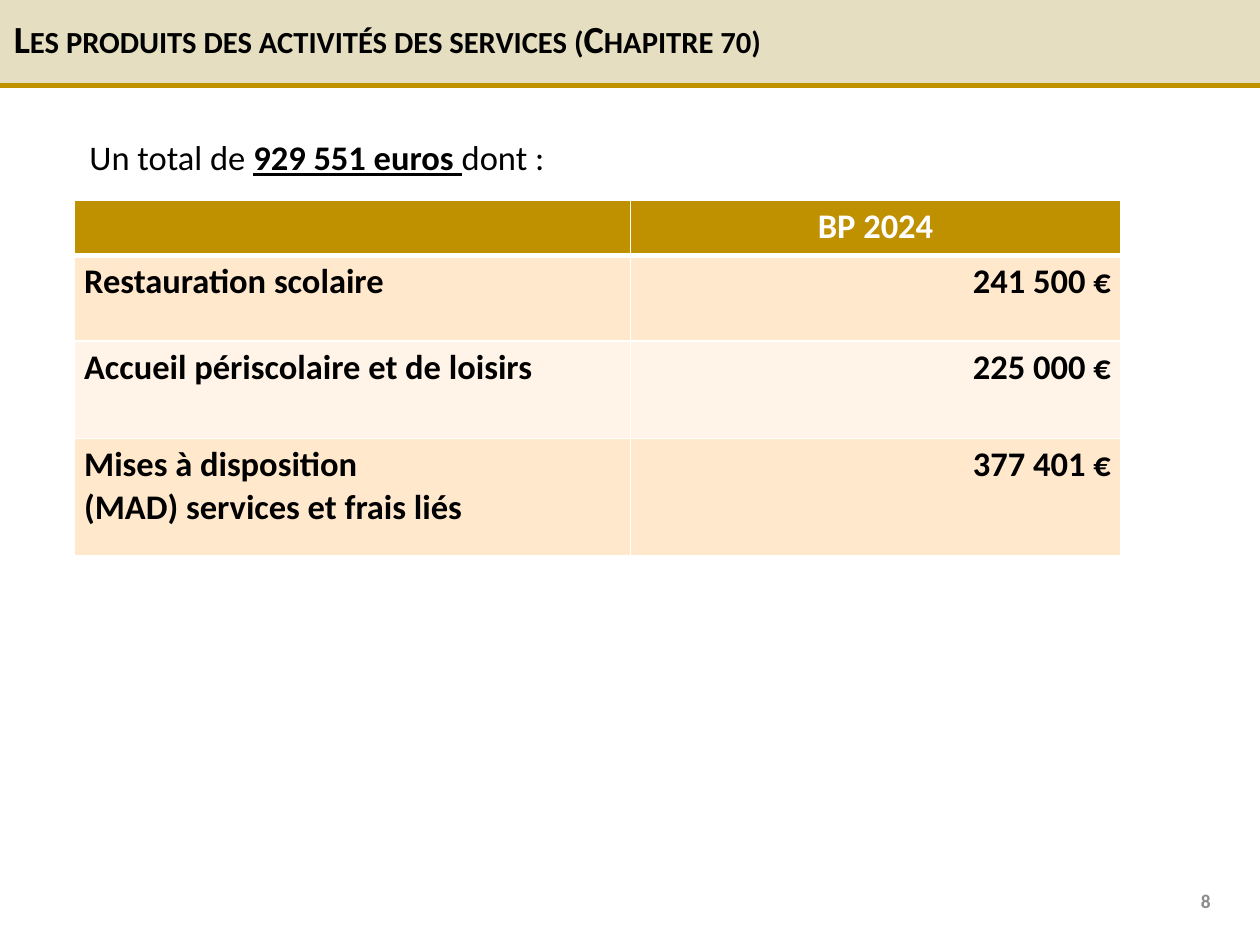
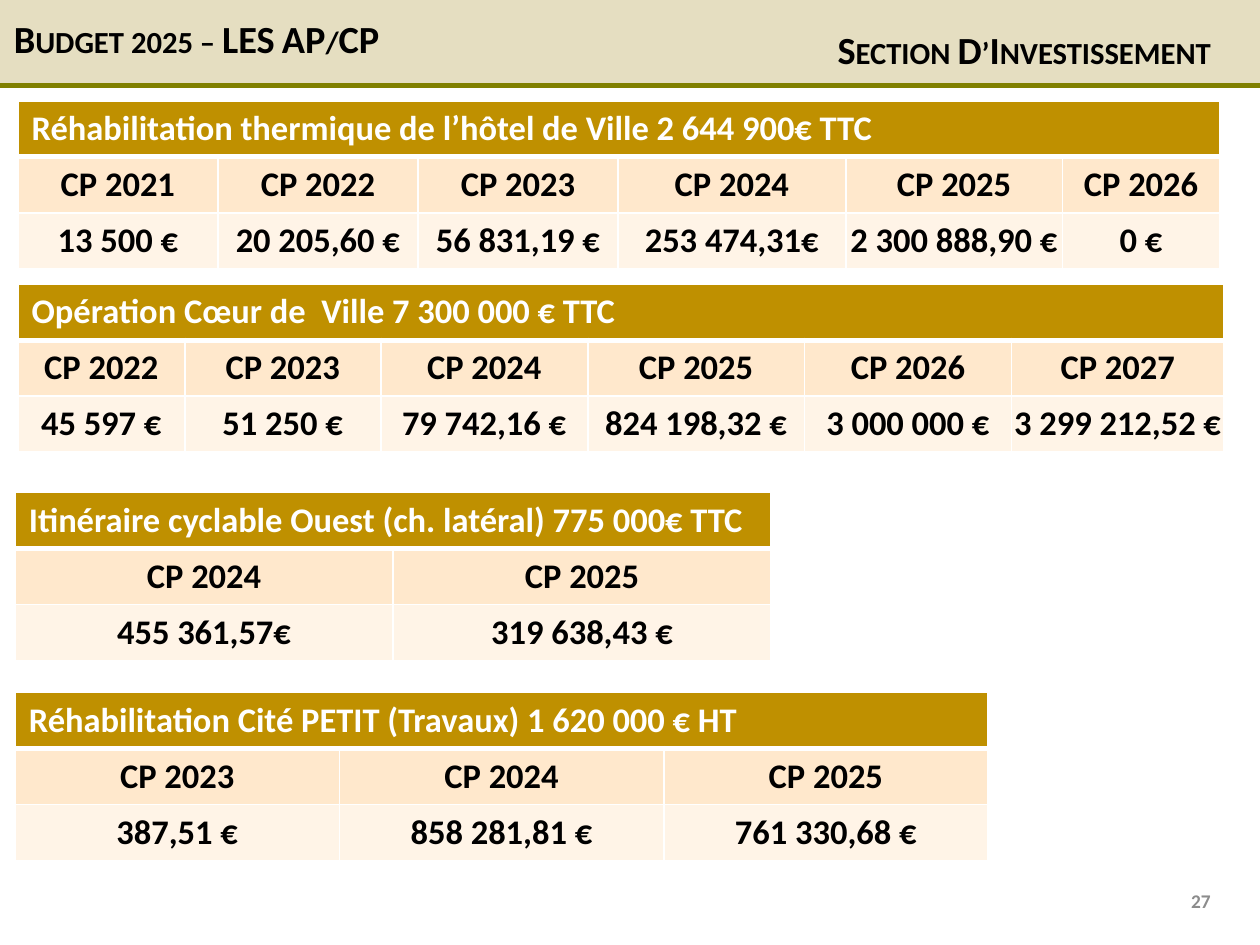
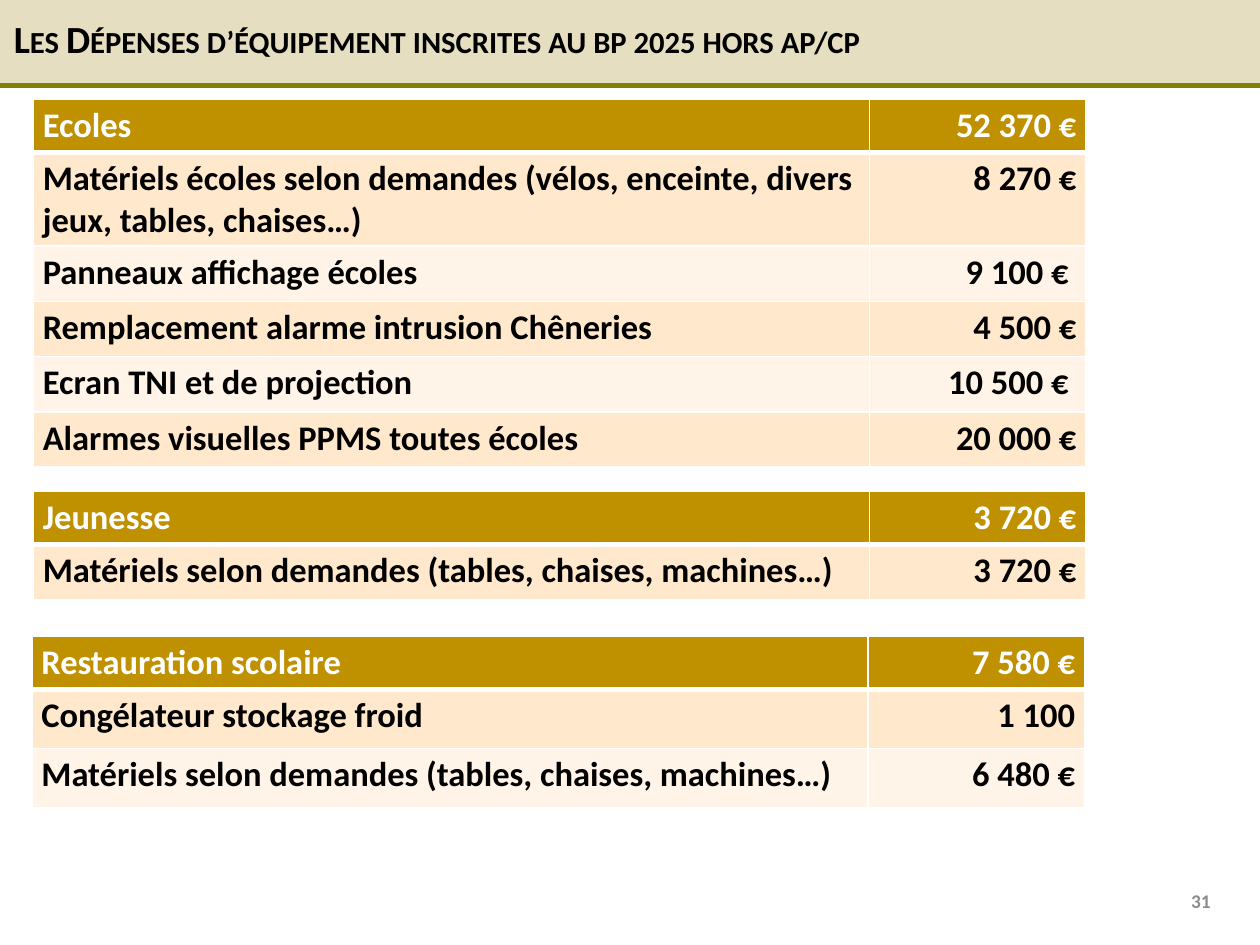
import dataclasses

import lxml.etree
import pptx
import pptx.dml.color
import pptx.enum.shapes
import pptx.enum.text
import pptx.oxml.ns
import pptx.util

LEFT = pptx.enum.text.PP_ALIGN.LEFT
CENTER = pptx.enum.text.PP_ALIGN.CENTER
RIGHT = pptx.enum.text.PP_ALIGN.RIGHT
TOP, MIDDLE = pptx.enum.text.MSO_ANCHOR.TOP, pptx.enum.text.MSO_ANCHOR.MIDDLE


@dataclasses.dataclass(frozen=True)
class Theme:
    """Colours, font, type sizes and line widths of the deck."""
    font: str = "Calibri"
    ink: str = "000000"
    paper: str = "FFFFFF"
    band: str = "E5DEC1"
    gold: str = "BF9000"
    olive: str = "808000"
    grey: str = "8C8C8C"
    stripes: tuple = ("FFE8CC", "FFF4E7")
    title: float = 20
    body: float = 18
    number: float = 10.1
    rule: float = 2.25
    thin: float = 1
    thick: float = 3


def rgb(value):
    """Turn a hex string into a colour."""
    return pptx.dml.color.RGBColor.from_string(value)


class Deck:
    """Holds the style and the current slide, on a grid of 100 columns by 100 rows."""

    def __init__(self, theme):
        """Start an empty presentation."""
        self.t = theme
        self.prs = pptx.Presentation()
        self.prs.slide_width = pptx.util.Inches(9.13)
        self.prs.slide_height = pptx.util.Inches(6.85)
        self.s = None

    def col(self, n):
        """Return the width of n columns."""
        return round(self.prs.slide_width * n / 100)

    def row(self, n):
        """Return the height of n rows."""
        return round(self.prs.slide_height * n / 100)

    def box(self, x, y, w, h):
        """Return a grid rectangle as lengths."""
        return self.col(x), self.row(y), self.col(w), self.row(h)

    def paragraph(self, tf, runs, size, color, align=LEFT, small=False, leading=None):
        """Fill the first paragraph from (text, bold, underline) runs."""
        p = tf.paragraphs[0]
        p.alignment = align
        if leading:
            p.line_spacing = leading
        for text, bold, underline in runs:
            for i, line in enumerate(text.split("\n")):
                if i:
                    p.add_line_break()
                r = p.add_run()
                r.text = line
                r.font.name, r.font.size = self.t.font, pptx.util.Pt(size)
                r.font.bold, r.font.underline = bold, underline
                r.font.color.rgb = rgb(color)
                if small:
                    r._r.get_or_add_rPr().set("cap", "small")

    def slide(self, title, number, rule):
        """Add a slide with its title band, rule and page number."""
        self.s = self.prs.slides.add_slide(self.prs.slide_layouts[5])
        sp = self.s.shapes.title
        sp.left, sp.top, sp.width, sp.height = self.box(0, 0, 100, 9.05)
        sp.fill.solid()
        sp.fill.fore_color.rgb = rgb(self.t.band)
        tf = sp.text_frame
        tf.auto_size = pptx.enum.text.MSO_AUTO_SIZE.NONE
        tf.vertical_anchor = MIDDLE
        tf.margin_top = pptx.util.Inches(0.03)
        self.paragraph(tf, [(title, True, False)], self.t.title, self.t.ink, small=True, leading=0.9)
        self.line(0, 9.05, 100, 9.05, rule)
        self.text(70.76, 92.7, 26.4, 5.26, [(str(number), True, False)],
                  self.t.number, self.t.grey, MIDDLE, align=RIGHT)

    def line(self, x1, y1, x2, y2, color):
        """Draw a straight rule."""
        ln = self.s.shapes.add_connector(pptx.enum.shapes.MSO_CONNECTOR.STRAIGHT,
                                         self.col(x1), self.row(y1), self.col(x2), self.row(y2))
        ln.line.color.rgb = rgb(color)
        ln.line.width = pptx.util.Pt(self.t.rule)
        lxml.etree.SubElement(ln._element.spPr, pptx.oxml.ns.qn("a:effectLst"))

    def text(self, x, y, w, h, runs, size, color, anchor=TOP, **style):
        """Add a text box."""
        tf = self.s.shapes.add_textbox(*self.box(x, y, w, h)).text_frame
        tf.word_wrap = True
        tf.vertical_anchor = anchor
        self.paragraph(tf, runs, size, color, **style)

    def borders(self, cell, top, bottom):
        """Give a cell its white borders."""
        tc_pr = cell._tc.get_or_add_tcPr()
        widths = {"lnL": self.t.thin, "lnR": self.t.thin, "lnT": top, "lnB": bottom}
        for i, (tag, width) in enumerate(widths.items()):
            ln = lxml.etree.Element(pptx.oxml.ns.qn("a:" + tag), w=str(int(pptx.util.Pt(width))))
            fill = lxml.etree.SubElement(ln, pptx.oxml.ns.qn("a:solidFill"))
            lxml.etree.SubElement(fill, pptx.oxml.ns.qn("a:srgbClr"), val=self.t.paper)
            tc_pr.insert(i, ln)

    def table(self, x, y, cols, rows, data, head, body, inset=(0.07, 0.04), anchor=TOP):
        """Add a table with a gold header row and striped rows."""
        tbl = self.s.shapes.add_table(len(rows), len(cols),
                                      *self.box(x, y, sum(cols), sum(rows))).table
        tbl.first_row = tbl.horz_banding = False
        for column, w in zip(tbl.columns, cols):
            column.width = self.col(w)
        for i, (h, texts) in enumerate(zip(rows, data)):
            tbl.rows[i].height = self.row(h)
            fill, ink = (self.t.stripes[(i - 1) % 2], self.t.ink) if i else (self.t.gold, self.t.paper)
            for j in range(len(cols)):
                cell = tbl.cell(i, j)
                cell.fill.solid()
                cell.fill.fore_color.rgb = rgb(fill)
                self.borders(cell, self.t.thick if i == 1 else self.t.thin,
                             self.t.thin if i else self.t.thick)
                cell.margin_left = cell.margin_right = pptx.util.Inches(inset[0])
                cell.margin_top = cell.margin_bottom = pptx.util.Inches(inset[1])
                cell.vertical_anchor = anchor if i else TOP
                if j < len(texts) and texts[j]:
                    self.paragraph(cell.text_frame, [(texts[j], True, False)], self.t.body, ink,
                                   (body if i else head)[j])
        return tbl

    def credits(self, x, y, cols, heading, first_year, amounts):
        """Add a table of yearly payment credits under a merged heading."""
        n = len(cols)
        years = [f"CP {first_year + i}" for i in range(n)]
        tbl = self.table(x, y, cols, [5.93] * 3, [[heading], years, amounts],
                         [LEFT] * n, [CENTER] * n, (0, 0.05), MIDDLE)
        tbl.cell(0, 0).merge(tbl.cell(0, n - 1))
        tbl.cell(0, 0).margin_left = pptx.util.Inches(0.1)

    def expenses(self, x, y, rows, data):
        """Add a table of items and amounts."""
        self.table(x, y, [66.37, 17.2], rows, data, (LEFT, RIGHT), (LEFT, RIGHT))


def main():
    """Build the deck."""
    t = Theme()
    d = Deck(t)

    d.slide("Les produits des activités des services (Chapitre 70)", 8, t.gold)
    d.table(5.91, 21.17, [44.14, 38.88], [5.84, 9.05, 10.36, 12.41], [
        ("", "BP 2024"),
        ("Restauration scolaire", "241 500 €"),
        ("Accueil périscolaire et de loisirs", "225 000 €"),
        ("Mises à disposition \n(MAD) services et frais liés", "377 401 €"),
    ], (LEFT, CENTER), (LEFT, RIGHT))
    d.text(6.02, 13.72, 70.76, 5.84, [
        ("Un total de ", False, False), ("929 551 euros ", True, True), ("dont :", False, False),
    ], t.body, t.ink)

    d.slide("Budget 2025 – LES AP/CP", 27, t.olive)
    d.text(65.39, 2.63, 33.95, 5.84, [("Section D’Investissement", True, False)],
           t.title, t.ink, small=True, leading=0.9)
    d.credits(1.42, 10.66, [15.88, 15.88, 15.88, 18.07, 17.2, 12.49],
              "Réhabilitation thermique de l’hôtel de Ville 2 644 900€ TTC", 2021,
              ["13 500 €", "20 205,60 €", "56 831,19 €", "253 474,31€", "2 300 888,90 €", "0 €"])
    d.credits(1.42, 30.07, [13.25, 15.55, 16.43, 17.2, 16.43, 16.87],
              "Opération Cœur de  Ville 7 300 000 € TTC", 2022,
              ["45 597 €", "51 250 €", "79 742,16 €", "824 198,32 €", "3 000 000 €", "3 299 212,52 €"])
    d.credits(1.2, 52.12, [30] * 2, "Itinéraire cyclable Ouest (ch. latéral) 775 000€ TTC", 2024,
              ["455 361,57€", "319 638,43 €"])
    d.credits(1.2, 73.28, [25.74] * 3, "Réhabilitation Cité PETIT (Travaux) 1 620 000 € HT", 2023,
              ["387,51 €", "858 281,81 €", "761 330,68 €"])

    d.slide("Les Dépenses d’équipement inscrites au bp 2025 hors ap/cp", 31, t.olive)
    supplies = "Matériels selon demandes (tables, chaises, machines…)"
    d.expenses(2.63, 10.51, [5.62, 9.93] + [5.84] * 4, [
        ("Ecoles", "52 370 €"),
        ("Matériels écoles selon demandes (vélos, enceinte, divers jeux, tables, chaises…)", "8 270 €"),
        ("Panneaux affichage écoles", "9 100 € "),
        ("Remplacement alarme intrusion Chêneries", "4 500 €"),
        ("Ecran TNI et de projection", "10 500 € "),
        ("Alarmes visuelles PPMS toutes écoles", "20 000 €"),
    ])
    d.expenses(2.63, 51.97, [5.62, 5.84], [("Jeunesse", "3 720 €"), (supplies, "3 720 €")])
    d.expenses(2.52, 67.3, [5.62, 6.28, 6.28], [
        ("Restauration scolaire", "7 580 €"),
        ("Congélateur stockage froid", "1 100"),
        (supplies, "6 480 €"),
    ])

    d.prs.save("out.pptx")


if __name__ == "__main__":
    main()
